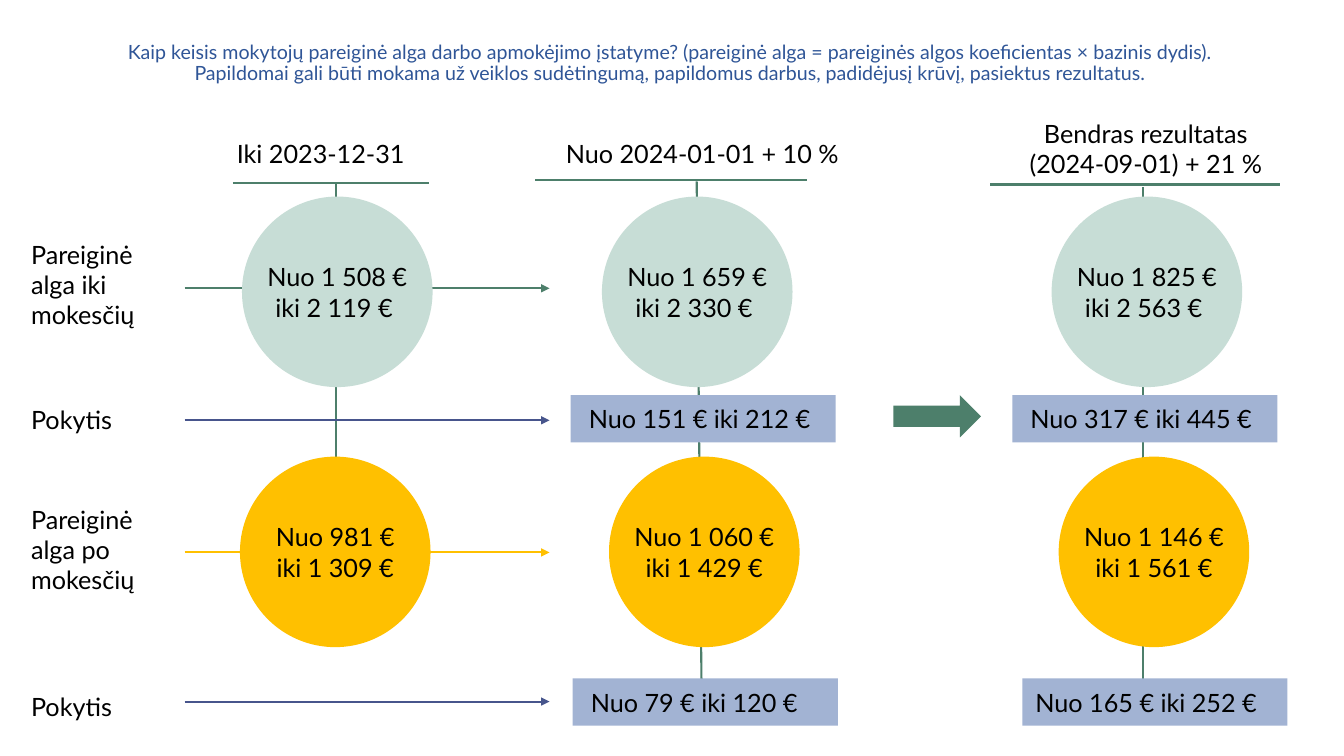
from dataclasses import dataclass

from lxml import etree
from pptx import Presentation
from pptx.dml.color import RGBColor
from pptx.enum import shapes, text
from pptx.oxml import ns
from pptx.util import Inches, Pt


@dataclass(frozen=True)
class Theme:
    """Colours, font and type sizes."""
    font: str = "Lato"
    title_size: int = 14
    body_size: int = 18
    line_width: float = 1.5
    title: str = "2F5597"
    ink: str = "000000"
    green: str = "4D7F6B"
    mint: str = "C7DDD6"
    yellow: str = "FFC000"
    blue: str = "47558C"
    pale_blue: str = "A2B3D3"


@dataclass(frozen=True)
class Box:
    """A rectangle in inches."""
    left: float
    top: float
    width: float
    height: float

    def inner(self, left, top, width, height):
        """Return a box placed relative to this one."""
        return Box(self.left + left, self.top + top, width, height)

    def lengths(self):
        """Return left, top, width and height as lengths."""
        return [Inches(side) for side in (self.left, self.top, self.width, self.height)]


@dataclass(frozen=True)
class Period:
    """One pay period, with offsets measured from its column box."""
    box: Box
    header: list
    header_top: float
    header_align: text.PP_ALIGN
    rule: tuple
    stem: tuple
    circles: list
    changes: list


THEME = Theme()
LEFT, CENTER = text.PP_ALIGN.LEFT, text.PP_ALIGN.CENTER
ARROWS = Box(1.83, 2.86, 3.62, 4.1)
LABELS = Box(0.21, 2.32, 1.5, 4.89)
TITLE = [
    "Kaip keisis mokytojų pareiginė alga darbo apmokėjimo įstatyme? "
    "(pareiginė alga = pareiginės algos koeficientas × bazinis dydis).",
    "Papildomai gali būti mokama už veiklos sudėtingumą, papildomus darbus, "
    "padidėjusį krūvį, pasiektus rezultatus.",
]
ROWS = [
    ("Pareiginė alga iki mokesčių", 0, 1.01, 0, THEME.green),
    ("Pokytis", 1.64, 0.4, 1.31, THEME.blue),
    ("Pareiginė alga po mokesčių", 2.63, 1.01, 2.62, THEME.yellow),
    ("Pokytis", 4.49, 0.4, 4.1, THEME.blue),
]
PERIODS = [
    Period(Box(2.25, 1.12, 2.28, 6.08), ["Iki 2023-12-31"], 0.2, LEFT,
           (0.06, 2, 0.7), (1.08, 0.7, 1.08, 4.78),
           [(0.15, ["Nuo 1 508 €", "iki 2 119 € "]), (0.13, ["Nuo 981 €", "iki 1 309 €"])],
           []),
    Period(Box(5.18, 1.12, 3.57, 6.08), ["Nuo 2024-01-01 + 10 %"], 0.2, CENTER,
           (0.13, 2.82, 0.67), (1.73, 0.68, 1.78, 5.9),
           [(0.79, ["Nuo 1 659 €", "iki 2 330 € "]), (0.86, ["Nuo 1 060 €", "iki 1 429 €"])],
           [(0.48, 0.18, "Nuo 151 € iki 212 €"), (0.5, 0.18, "Nuo 79 € iki 120 €")]),
    Period(Box(9.58, 1.12, 3.57, 6.08), ["Bendras rezultatas", "(2024-09-01) + 21 %"], 0, CENTER,
           (0.24, 3.12, 0.71), (1.76, 0.74, 1.76, 5.62),
           [(0.85, ["Nuo 1 825 €", "iki 2 563 € "]), (0.92, ["Nuo 1 146 €", "iki 1 561 €"])],
           [(0.46, 0.18, "Nuo 317 € iki 445 €"), (0.56, 0.13, "Nuo 165 € iki 252 €")]),
]


def colour(value):
    """Turn a hex value into a colour."""
    return RGBColor.from_string(value)


def write(frame, lines, align=CENTER, size=THEME.body_size, ink=THEME.ink):
    """Fill a text frame with one paragraph per line."""
    for index, line in enumerate(lines):
        para = frame.add_paragraph() if index else frame.paragraphs[0]
        para.text = line
        para.alignment = align
        para.font.name = THEME.font
        para.font.size = Pt(size)
        para.font.color.rgb = colour(ink)


def add_text(page, box, lines, **style):
    """Add a wrapping text box and return its frame."""
    frame = page.shapes.add_textbox(*box.lengths()).text_frame
    frame.word_wrap = True
    write(frame, lines, **style)
    return frame


def add_filled(page, kind, box, fill):
    """Add a flat shape without an outline."""
    shape = page.shapes.add_shape(kind, *box.lengths())
    shape.shadow.inherit = False
    shape.fill.solid()
    shape.fill.fore_color.rgb = colour(fill)
    shape.line.fill.background()
    frame = shape.text_frame
    frame.vertical_anchor = text.MSO_ANCHOR.MIDDLE
    frame.word_wrap = False
    return shape


def add_line(page, box, start_x, start_y, end_x, end_y, ink, arrow=False):
    """Draw a straight line between two points of a box."""
    line = page.shapes.add_connector(
        shapes.MSO_CONNECTOR.STRAIGHT,
        Inches(box.left + start_x), Inches(box.top + start_y),
        Inches(box.left + end_x), Inches(box.top + end_y))
    line.line.color.rgb = colour(ink)
    line.line.width = Pt(THEME.line_width)
    properties = line.element.spPr
    if arrow:
        etree.SubElement(properties.find(ns.qn("a:ln")), ns.qn("a:tailEnd"), type="triangle")
    etree.SubElement(properties, ns.qn("a:effectLst"))


def add_title(page, box):
    """Place the two-line title."""
    frame = add_text(page, box, TITLE, size=THEME.title_size, ink=THEME.title)
    frame.vertical_anchor = text.MSO_ANCHOR.MIDDLE
    for para in frame.paragraphs:
        para.line_spacing = 0.9


def add_rows(page, labels, arrows):
    """Place the row labels and the arrows beside them."""
    for label, top, height, arrow_top, ink in ROWS:
        add_text(page, labels.inner(0, top, labels.width, height), [label], align=LEFT)
        add_line(page, arrows, 0, arrow_top, arrows.width, arrow_top, ink, arrow=True)


def add_period(page, box, period):
    """Place a period's header, salary circles and change bars."""
    add_text(page, box.inner(0, period.header_top, box.width, 0.4 * len(period.header)),
             period.header, align=period.header_align)
    rule_start, rule_end, rule_top = period.rule
    add_line(page, box, rule_start, rule_top, rule_end, rule_top, THEME.green)
    for (left, lines), top, fill in zip(period.circles, (0.83, 3.41), (THEME.mint, THEME.yellow)):
        circle = add_filled(page, shapes.MSO_SHAPE.OVAL, box.inner(left, top, 1.89, 1.89), fill)
        write(circle.text_frame, lines)
    for (left, indent, line), top in zip(period.changes, (2.8, 5.61)):
        bar = add_filled(page, shapes.MSO_SHAPE.RECTANGLE,
                         box.inner(left, top, 2.63, 0.47), THEME.pale_blue)
        bar.text_frame.margin_left = Inches(indent)
        bar.text_frame.word_wrap = True
        write(bar.text_frame, [line], align=LEFT)


def add_salary_slide(deck):
    """Build the salary comparison slide."""
    page = deck.slides.add_slide(deck.slide_layouts[6])
    add_title(page, Box(0.38, 0.3, 12.54, 0.66))
    for period in PERIODS:
        add_line(page, period.box, *period.stem, THEME.green)
    add_rows(page, LABELS, ARROWS)
    for period in PERIODS:
        add_period(page, period.box, period)
    add_filled(page, shapes.MSO_SHAPE.RIGHT_ARROW, Box(8.86, 3.92, 0.87, 0.42), THEME.green)


def main():
    """Create and save the deck."""
    deck = Presentation()
    deck.slide_width, deck.slide_height = Inches(13.33), Inches(7.5)
    add_salary_slide(deck)
    deck.save("out.pptx")


if __name__ == "__main__":
    main()
